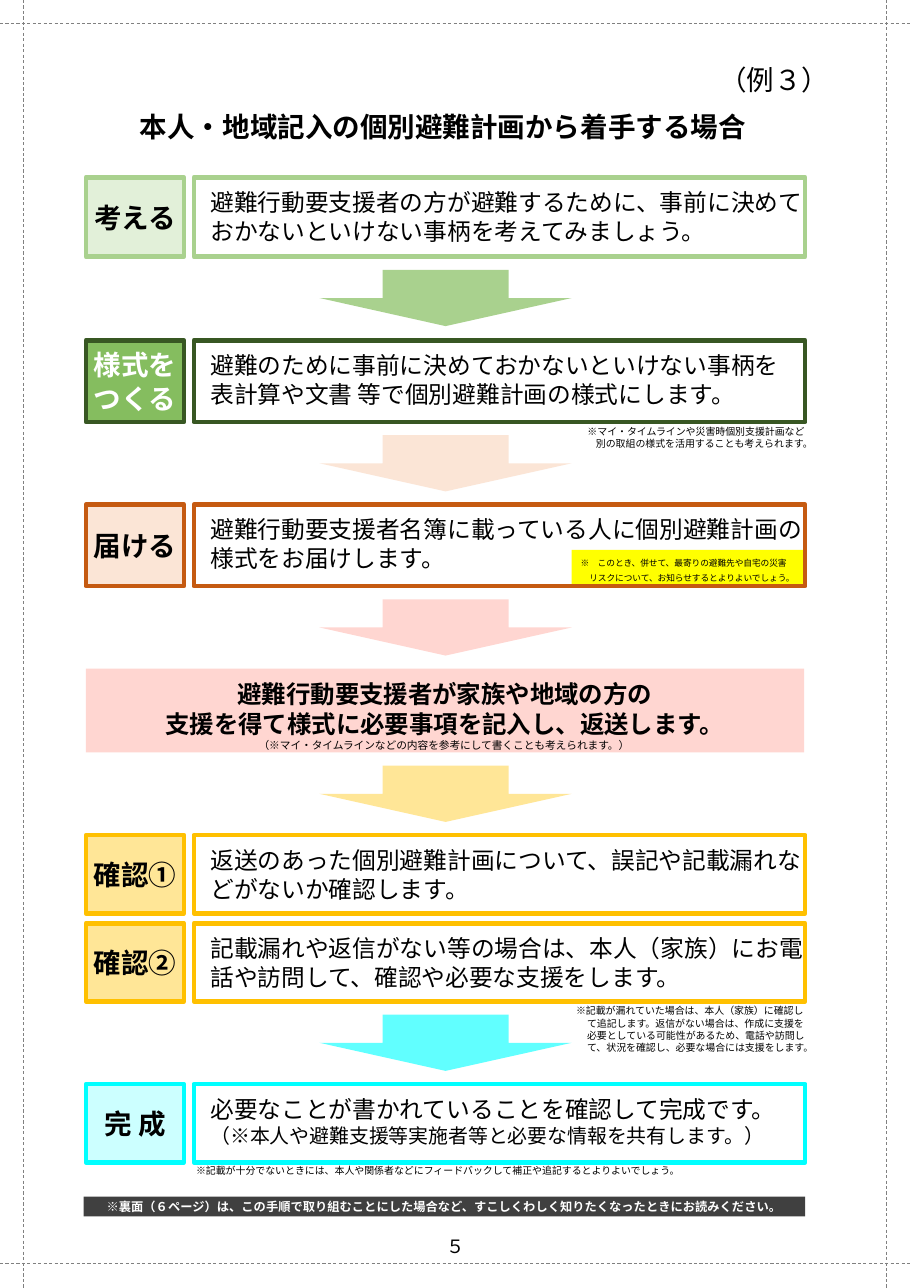
from lxml.etree import SubElement
from pptx import Presentation
from pptx.dml.color import RGBColor
from pptx.enum.dml import MSO_LINE
from pptx.enum.shapes import MSO_CONNECTOR, MSO_SHAPE
from pptx.enum.text import MSO_ANCHOR, PP_ALIGN
from pptx.oxml.ns import qn
from pptx.util import Inches, Pt

FONT = "Noto Sans CJK JP"
COLUMNS, ROWS = 82.7, 116.9
LINE_HEIGHT = 1.22
HANGING = {"margin": 1, "indent": -1}
CENTRED = {"align": PP_ALIGN.CENTER}
MIDDLE = {"anchor": MSO_ANCHOR.MIDDLE, "wrap": False, **CENTRED}


def color(code):
    return RGBColor.from_string(code)


def grid(count):
    return Inches(round(count / 10, 3))


class Flyer:
    """Draws the flyer's elements on a grid of tenth-inch columns and rows."""

    def __init__(self, presentation):
        presentation.slide_width = grid(COLUMNS)
        presentation.slide_height = grid(ROWS)
        self.slide = presentation.slides.add_slide(presentation.slide_layouts[6])
        self.shapes = self.slide.shapes

    def fill_text(self, shape, lines, size, ink="000000", bold=False, align=PP_ALIGN.LEFT,
                  anchor=MSO_ANCHOR.TOP, wrap=True, insets=(0, 0), spacing=None):
        left, top = insets
        frame = shape.text_frame
        frame_format = {"word_wrap": wrap, "vertical_anchor": anchor,
                        "margin_left": grid(left), "margin_top": grid(top),
                        "margin_right": 0, "margin_bottom": 0}
        for name, value in frame_format.items():
            setattr(frame, name, value)
        for index, line in enumerate(lines):
            text, own = line if isinstance(line, tuple) else (line, {})
            points = own.get("size", size)
            paragraph = frame.add_paragraph() if index else frame.paragraphs[0]
            paragraph.alignment = own.get("align", align)
            paragraph.line_spacing = Pt(spacing or round(points * LINE_HEIGHT, 1))
            properties = paragraph._p.get_or_add_pPr()
            properties.set("marL", str(grid(own.get("margin", 0))))
            properties.set("indent", str(grid(own.get("indent", 0))))
            run = paragraph.add_run()
            run.text = text
            for name, value in {"size": Pt(points), "bold": bold, "name": FONT}.items():
                setattr(run.font, name, value)
            run.font.color.rgb = color(ink)
            SubElement(run._r.get_or_add_rPr(), qn("a:ea"), typeface=FONT)

    def text(self, place, lines, size, **style):
        box = self.shapes.add_textbox(*map(grid, place))
        self.fill_text(box, lines, size, **style)

    def block(self, place, fill=None, outline=None, kind=MSO_SHAPE.RECTANGLE):
        shape = self.shapes.add_shape(kind, *map(grid, place))
        shape.shadow.inherit = False
        if fill:
            shape.fill.solid()
            shape.fill.fore_color.rgb = color(fill)
        else:
            shape.fill.background()
        if outline:
            shape.line.color.rgb = color(outline)
            shape.line.width = Pt(3)
        else:
            shape.line.fill.background()
        return shape

    def step(self, top, height, label, lines, fill, outline, ink="000000"):
        tag = self.block((7.8, top, 8.9, height), fill, outline)
        self.fill_text(tag, label, 18, ink=ink, bold=True, **MIDDLE)
        frame = self.block((17.6, top, 55.5, height), None, outline)
        self.fill_text(frame, lines, 15.5, insets=(1.5, 0.9))

    def arrow(self, top, fill):
        self.block((29, top, 22.9, 5.1), fill, kind=MSO_SHAPE.DOWN_ARROW)

    def guide(self, start, end):
        line = self.shapes.add_connector(MSO_CONNECTOR.STRAIGHT, *map(grid, start + end))
        for name, value in {"width": Pt(0.5), "dash_style": MSO_LINE.DASH}.items():
            setattr(line.line, name, value)
        line.line.color.rgb = color("808080")
        SubElement(line._element.spPr, qn("a:effectLst"))


STEPS = [
    (16.1, 7.2, ["考える"],
     ["避難行動要支援者の方が避難するために、事前に決めておかないといけない事柄を考えてみましょう。"],
     "E2F0D9", "A9D18E"),
    (30.9, 7.4, ["様式を", "つくる"],
     ["避難のために事前に決めておかないといけない事柄を", "表計算や文書 等で個別避難計画の様式にします。"],
     "85BD5F", "385723", "FFFFFF"),
    (45.8, 7.4, ["届ける"],
     ["避難行動要支援者名簿に載っている人に個別避難計画の様式をお届けします。"],
     "FBE5D6", "C55A11"),
    (75.8, 7.1, ["確認①"],
     ["返送のあった個別避難計画について、誤記や記載漏れなどがないか確認します。"],
     "FFE697", "FFC000"),
    (83.8, 7.1, ["確認②"],
     ["記載漏れや返信がない等の場合は、本人（家族）にお電話や訪問して、確認や必要な支援をします。"],
     "FFE697", "FFC000"),
    (98.4, 7.1, ["完 成"],
     ["必要なことが書かれていることを確認して完成です。",
      ("（※本人や避難支援等実施者等と必要な情報を共有します。）", {"size": 13})],
     "CCFFFF", "00FFFF"),
]
ARROWS = [(24.5, "A9D18E"), (39.5, "FBE5D6"), (54.4, "FFD6D1"), (69.5, "FFE697"), (92.1, "61FFFF")]
NOTES = [
    ((52.3, 38.6, 21.8, 2.2),
     [("※マイ・タイムラインや災害時個別支援計画など", {**HANGING, **CENTRED}),
      ("別の取組の様式を活用することも考えられます。", {"margin": 1.8})]),
    ((52.3, 91.2, 21.4, 4.4),
     [("※記載が漏れていた場合は、本人（家族）に確認して追記します。返信がない場合は、"
       "作成に支援を必要としている可能性があるため、電話や訪問して、状況を確認し、"
       "必要な場合には支援をします。", HANGING)]),
    ((17.8, 105.7, 45.1, 1.1),
     [("※記載が十分でないときには、本人や関係者などにフィードバックして補正や追記するとよりよいでしょう。",
       HANGING)]),
]


def main():
    presentation = Presentation()
    flyer = Flyer(presentation)

    flyer.text((12.7, 9.9, 57.5, 3.1), ["本人・地域記入の個別避難計画から着手する場合"], 18, bold=True, wrap=False)
    flyer.text((64.8, 5.7, 10.5, 3.1), ["（例３）"], 18, align=PP_ALIGN.RIGHT, wrap=False)

    advice = flyer.block((51.9, 49.9, 21.1, 3.4), "FFFF00")
    flyer.fill_text(advice, ["※　このとき、併せて、最寄りの避難先や自宅の災害",
                             ("リスクについて、お知らせするとよりよいでしょう。", {"margin": 0.8})],
                    5.7, insets=(0.8, 0.3), spacing=10)

    for step in STEPS:
        flyer.step(*step)
    for arrow in ARROWS:
        flyer.arrow(*arrow)

    reply = flyer.block((7.8, 60.7, 65.2, 7.6), "FFD6D1")
    flyer.fill_text(reply, ["避難行動要支援者が家族や地域の方の", "支援を得て様式に必要事項を記入し、返送します。"],
                    16, bold=True, insets=(0, 0.9), **CENTRED)
    flyer.text((23.1, 67, 34.4, 1.2),
               ["（※マイ・タイムラインなどの内容を参考にして書くことも考えられます。）"], 7, wrap=False, **CENTRED)

    for place, lines in NOTES:
        flyer.text(place, lines, 6.5)

    footer = flyer.block((7.6, 108.6, 65.5, 1.8), "404040")
    flyer.fill_text(footer, ["※裏面（６ページ）は、この手順で取り組むことにした場合など、"
                             "すこしくわしく知りたくなったときにお読みください。"],
                    8, ink="FFFFFF", bold=True, **MIDDLE)
    flyer.text((39.5, 112.1, 3.7, 2), ["５"], 12, wrap=False, **CENTRED)

    for column in (2.1, COLUMNS - 2.2):
        flyer.guide((column, 0), (column, ROWS))
    for row in (2.1, ROWS - 2.2):
        flyer.guide((0, row), (COLUMNS, row))

    presentation.save("out.pptx")


if __name__ == "__main__":
    main()
